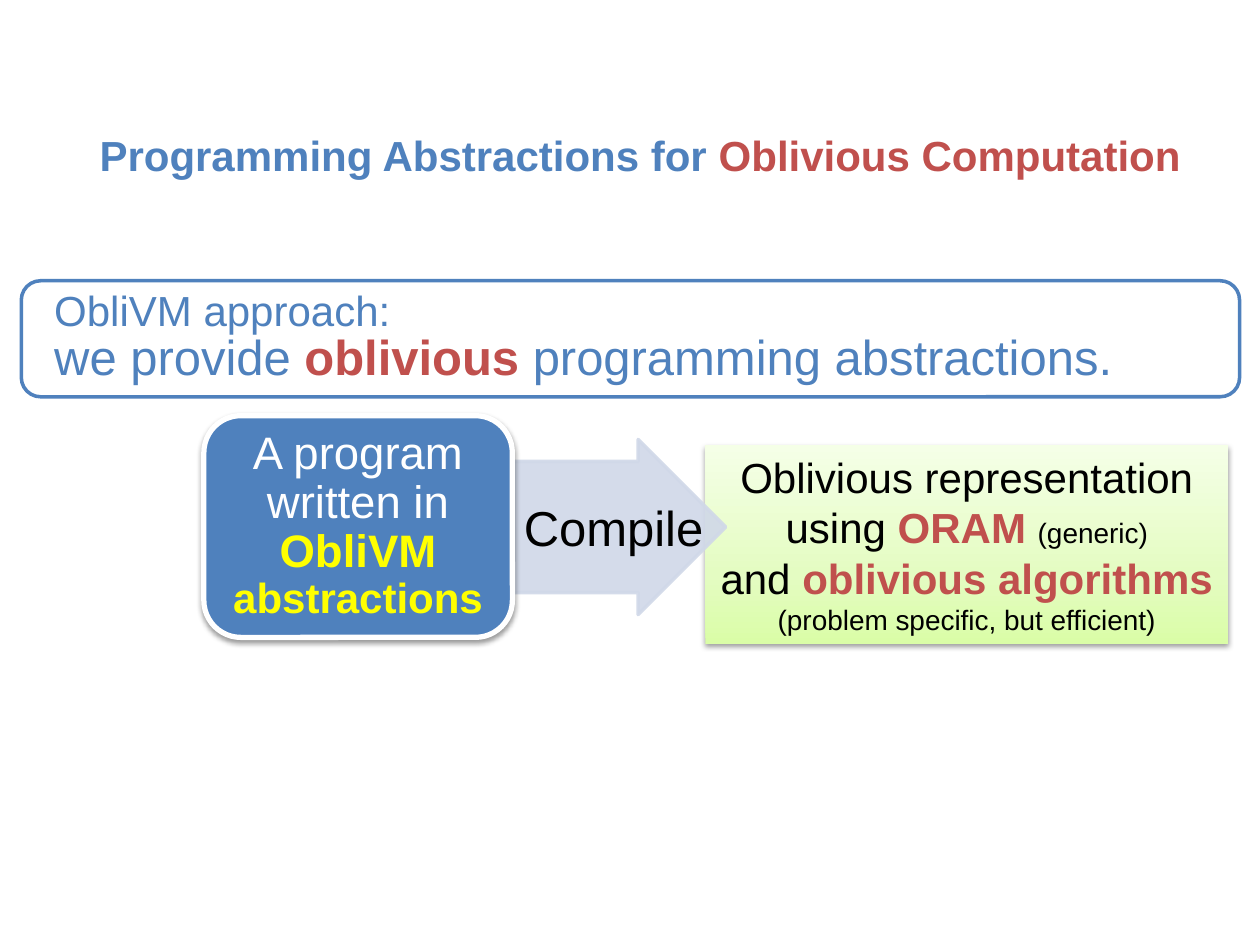
from copy import deepcopy
from dataclasses import dataclass

from lxml.etree import SubElement
from pptx import Presentation
from pptx.dml.color import RGBColor as Rgb
from pptx.enum.shapes import MSO_SHAPE as Preset
from pptx.enum.text import MSO_ANCHOR as Anchor, MSO_AUTO_SIZE as AutoSize, PP_ALIGN as Align
from pptx.oxml.ns import qn
from pptx.util import Cm, Pt


@dataclass(frozen=True)
class Theme:
    font: str = "Arial"
    blue: str = "4F81BD"
    red: str = "C0504D"
    yellow: str = "FFFF00"
    pale: str = "D0D8E8"
    white: str = "FFFFFF"
    black: str = "000000"
    greens: tuple = ((0, "DAFDA7"), (0.35, "E4FCC2"), (1, "F5FFE7"))
    note: int = 16
    normal: int = 24
    program: int = 26
    large: int = 28


THEME = Theme()


@dataclass(frozen=True)
class Box:
    left: float
    top: float
    width: float
    height: float

    def inner(self, left, top, width, height):
        return Box(self.left + left, self.top + top, width, height)

    def lengths(self):
        return [Cm(n) for n in (self.left, self.top, self.width, self.height)]


def rgb(color):
    return Rgb.from_string(color)


def style_font(font, size, color, bold=False):
    font.name = THEME.font
    font.size = Pt(size)
    font.color.rgb = rgb(color)
    font.bold = bold


def write(frame, paragraphs, size, color, align=Align.CENTER, spacing=1.0, bold=False):
    for index, pieces in enumerate(paragraphs):
        paragraph = frame.add_paragraph() if index else frame.paragraphs[0]
        paragraph.alignment = align
        paragraph.line_spacing = spacing
        style_font(paragraph.font, size, color, bold)
        for text, *style in pieces:
            run = paragraph.add_run()
            run.text = text
            if style:
                style_font(run.font, *style)


def set_margins(frame, left, top, right, bottom):
    frame.margin_left, frame.margin_top = Cm(left), Cm(top)
    frame.margin_right, frame.margin_bottom = Cm(right), Cm(bottom)


def add_panel(slide, preset, box, fill=None, line=None, width=2):
    panel = slide.shapes.add_shape(preset, *box.lengths())
    panel.shadow.inherit = False
    panel.text_frame.word_wrap = True
    if fill:
        panel.fill.solid()
        panel.fill.fore_color.rgb = rgb(fill)
    if line:
        panel.line.color.rgb = rgb(line)
        panel.line.width = Pt(width)
    else:
        panel.line.fill.background()
    return panel


def add_shadow(panel):
    effects = panel._element.spPr.find(qn("a:effectLst"))
    shadow = SubElement(effects, qn("a:outerShdw"), blurRad=str(Pt(3.1)),
                        dist=str(Pt(1.6)), dir="5400000", rotWithShape="0")
    color = SubElement(shadow, qn("a:srgbClr"), val=THEME.black)
    SubElement(color, qn("a:alpha"), val="38000")


def fill_gradient(panel, stops):
    panel.fill.gradient()
    panel.fill.gradient_angle = 90
    stop_list = panel._element.spPr.find(".//" + qn("a:gsLst"))
    stop_list.insert(1, deepcopy(stop_list[0]))
    for stop, (position, color) in zip(panel.fill.gradient_stops, stops):
        stop.position = position
        stop.color.rgb = rgb(color)


def place_title(slide, box):
    title = slide.shapes.title
    title.left, title.top, title.width, title.height = box.lengths()
    frame = title.text_frame
    frame.auto_size = AutoSize.NONE
    frame.vertical_anchor = Anchor.TOP
    write(frame, [[("Programming Abstractions for ",),
                   ("Oblivious Computation", THEME.normal, THEME.red, True)]],
          THEME.normal, THEME.blue, bold=True)


def place_approach(slide, box):
    frame = add_panel(slide, Preset.ROUNDED_RECTANGLE, box, THEME.white, THEME.blue).text_frame
    frame.vertical_anchor = Anchor.TOP
    set_margins(frame, 0.55, 0.12, 0.25, 0)
    write(frame, [
        [("ObliVM approach:", THEME.normal, THEME.blue)],
        [("we provide ",), ("oblivious", THEME.large, THEME.red, True),
         (" programming abstractions.",)],
    ], THEME.large, THEME.blue, Align.LEFT, 0.85)


def place_representation(slide, box):
    representation = add_panel(slide, Preset.RECTANGLE, box)
    fill_gradient(representation, THEME.greens)
    add_shadow(representation)
    frame = representation.text_frame
    frame.vertical_anchor = Anchor.TOP
    set_margins(frame, 0.25, 0.13, 0.25, 0.13)
    note = (THEME.note, THEME.black)
    accent = (THEME.normal, THEME.red, True)
    write(frame, [
        [("Oblivious representation",)],
        [("using ",), ("ORAM ", *accent), ("(generic)", *note)],
        [("and",), (" oblivious algorithms", *accent)],
        [("(problem specific, but efficient)", *note)],
    ], THEME.normal, THEME.black)


def place_compile_arrow(slide, box):
    arrow = add_panel(slide, Preset.RIGHT_ARROW, box, THEME.pale, THEME.pale)
    arrow.adjustments[0], arrow.adjustments[1] = 0.75, 0.5
    for color in arrow._element.spPr.iter(qn("a:srgbClr")):
        SubElement(color, qn("a:alpha"), val="90000")
    label = slide.shapes.add_textbox(*box.inner(-0.03, 1.05, 4.19, 1.45).lengths())
    label.text_frame.word_wrap = False
    write(label.text_frame, [[("Compile",)]], THEME.large, THEME.black, Align.LEFT)


def place_program(slide, box):
    program = add_panel(slide, Preset.ROUNDED_RECTANGLE, box, THEME.blue, THEME.white, 3)
    add_shadow(program)
    frame = program.text_frame
    frame.vertical_anchor = Anchor.MIDDLE
    set_margins(frame, 0.28, 0.13, 0.28, 0.13)
    write(frame, [[("A program written in ",),
                   ("ObliVM ", THEME.program, THEME.yellow, True),
                   ("abstractions", THEME.normal, THEME.yellow, True)]],
          THEME.program, THEME.white, spacing=0.9)


def place_compilation(slide, box):
    place_representation(slide, box.inner(10.11, 0.59, 10.54, 4.01))
    place_compile_arrow(slide, box.inner(6.23, 0.48, 4.29, 3.53))
    place_program(slide, box.inner(0, 0, 6.22, 4.47))


def main():
    deck = Presentation()
    deck.slide_width, deck.slide_height = Cm(25.4), Cm(19.05)
    slide = deck.slides.add_slide(deck.slide_layouts.get_by_name("Title Only"))
    place_title(slide, Box(0.84, 2.49, 24.13, 1.27))
    place_approach(slide, Box(0.43, 5.66, 24.56, 2.34))
    place_compilation(slide, Box(4.11, 8.38, 20.65, 4.6))
    deck.save("out.pptx")


if __name__ == "__main__":
    main()
